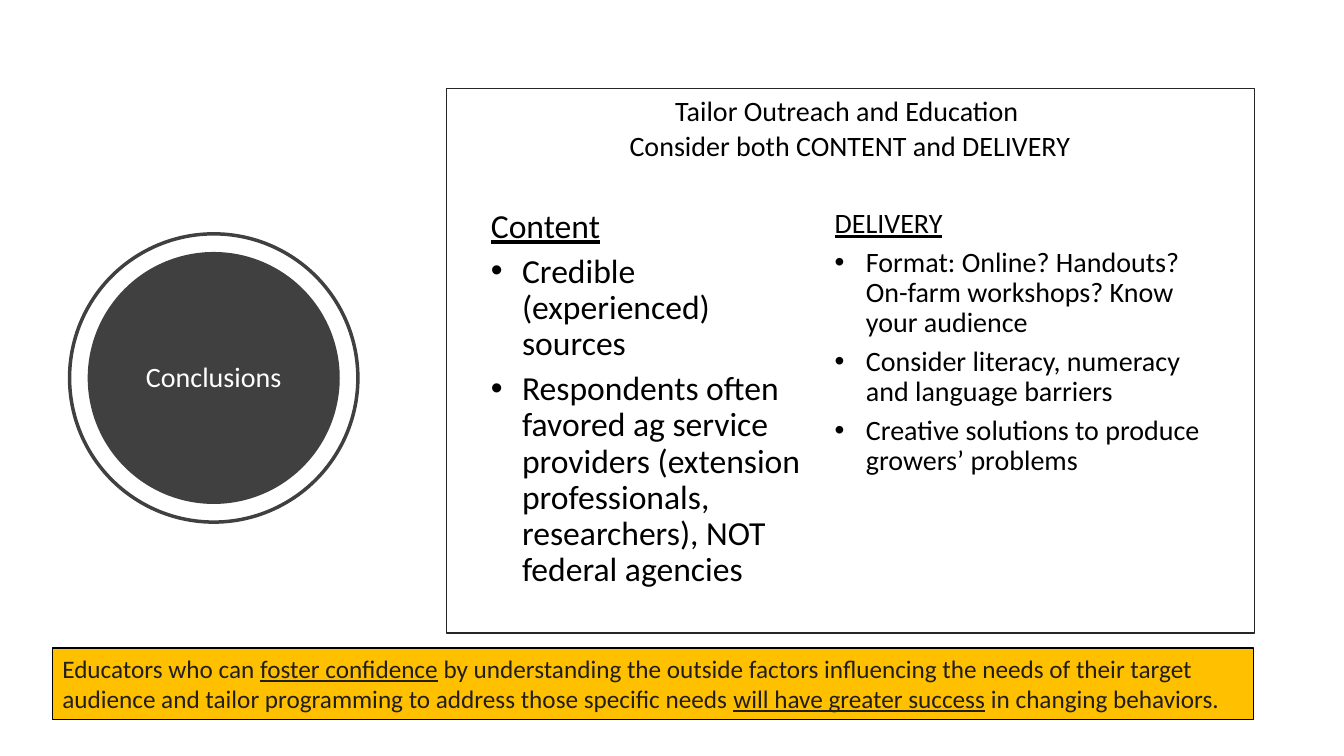
import pptx
import pptx.dml.color
import pptx.enum.shapes
import pptx.enum.text
import pptx.util
from pptx.util import Inches, Pt
from lxml import etree

SHAPES = pptx.enum.shapes.MSO_SHAPE
ALIGN = pptx.enum.text.PP_ALIGN
ANCHOR = pptx.enum.text.MSO_ANCHOR
DARK, BLACK, WHITE = "404040", "000000", "FFFFFF"
BULLET_INDENT = 0.31


def colour(hex_code):
    return pptx.dml.color.RGBColor.from_string(hex_code)


def add_panel(slide, preset, box, fill=None, line=None, line_width=1):
    panel = slide.shapes.add_shape(preset, *map(Inches, box))
    panel.shadow.inherit = False
    if fill:
        panel.fill.solid()
        panel.fill.fore_color.rgb = colour(fill)
    else:
        panel.fill.background()
    if line:
        panel.line.color.rgb = colour(line)
        panel.line.width = Pt(line_width)
    else:
        panel.line.fill.background()
    return panel


def add_text_box(slide, box):
    frame = slide.shapes.add_textbox(*map(Inches, box)).text_frame
    frame.word_wrap = True
    return frame


def add_bullet(paragraph):
    properties = paragraph._p.get_or_add_pPr()
    indent = Inches(BULLET_INDENT)
    properties.set("marL", str(indent))
    properties.set("indent", str(-indent))
    for tag, key, value in (("buFont", "typeface", "Arial"), ("buChar", "char", "•")):
        name = pptx.oxml.ns.qn("a:" + tag)
        etree.SubElement(properties, name).set(key, value)


def write_paragraph(frame, number, runs, size, text_colour, bullet=False, **layout):
    """Fill one paragraph with (text, underlined) runs."""
    paragraph = frame.paragraphs[0] if number == 0 else frame.add_paragraph()
    if bullet:
        add_bullet(paragraph)
    for key, value in layout.items():
        setattr(paragraph, key, value)
    for text, underlined in runs:
        run = paragraph.add_run()
        run.text = text
        font_format = {"name": "Calibri", "size": Pt(size), "underline": underlined}
        for key, value in font_format.items():
            setattr(run.font, key, value)
        run.font.color.rgb = colour(text_colour)


def add_conclusions_badge(slide, left, top, diameter, gap=0.18):
    """Filled disc centred inside a ring."""
    inner = diameter - 2 * gap
    disc = add_panel(slide, SHAPES.OVAL, (left + gap, top + gap, inner, inner), DARK)
    frame = disc.text_frame
    frame.word_wrap = True
    frame.vertical_anchor = ANCHOR.MIDDLE
    write_paragraph(frame, 0, [("Conclusions", False)], 20, WHITE,
                    alignment=ALIGN.CENTER, line_spacing=0.9, space_after=Pt(6))
    add_panel(slide, SHAPES.OVAL, (left, top, diameter, diameter), line=DARK, line_width=2.5)


def add_column(slide, box, heading, points, size):
    """Underlined heading above bulleted points."""
    frame = add_text_box(slide, box)
    for number, text in enumerate([heading, *points]):
        is_heading = number == 0
        write_paragraph(frame, number, [(text, is_heading)], size, BLACK,
                        bullet=not is_heading, alignment=ALIGN.LEFT,
                        line_spacing=0.9, space_after=Pt(6))


def add_outreach_panel(slide, left, top, width, height):
    add_panel(slide, SHAPES.RECTANGLE, (left, top, width, height), WHITE, "262626")

    # Centred title lines
    title = add_text_box(slide, (left + 0.34, top + 0.06, 7.32, 0.74))
    for number, text in enumerate(("Tailor Outreach and Education ",
                                   "Consider both CONTENT and DELIVERY")):
        write_paragraph(title, number, [(text, False)], 20, BLACK,
                        alignment=ALIGN.CENTER, line_spacing=0.8, space_after=Pt(6))

    # Two columns
    column_top, column_height = top + 1.15, 3.9
    add_column(slide, (left + 0.34, column_top, 3.36, column_height), "Content", (
        "Credible (experienced) sources",
        "Respondents often favored ag service providers (extension professionals, "
        "researchers), NOT federal agencies"), 24)
    add_column(slide, (left + 3.75, column_top, 3.91, column_height), "DELIVERY", (
        "Format: Online? Handouts? On-farm workshops? Know your audience",
        "Consider literacy, numeracy and language barriers",
        "Creative solutions to produce growers’ problems"), 20)


def add_takeaway_bar(slide, *box):
    bar = add_panel(slide, SHAPES.RECTANGLE, box, "FFC000", BLACK)
    frame = bar.text_frame
    frame.word_wrap = True
    frame.vertical_anchor = ANCHOR.TOP
    write_paragraph(frame, 0, (
        ("Educators who can ", False),
        ("foster confidence", True),
        (" by understanding the outside factors influencing the needs of their target "
         "audience and tailor programming to address those specific needs ", False),
        ("will have greater success", True),
        (" in changing behaviors.", False)), 18, "221E1F", alignment=ALIGN.LEFT)


def main():
    deck = pptx.Presentation()
    deck.slide_width, deck.slide_height = Inches(13.33), Inches(7.5)
    slide = deck.slides.add_slide(deck.slide_layouts[6])
    add_conclusions_badge(slide, 0.69, 2.32, 2.86)
    add_outreach_panel(slide, 4.43, 0.88, 8.01, 5.4)
    add_takeaway_bar(slide, 0.52, 6.43, 11.91, 0.71)
    deck.save("out.pptx")


if __name__ == "__main__":
    main()
